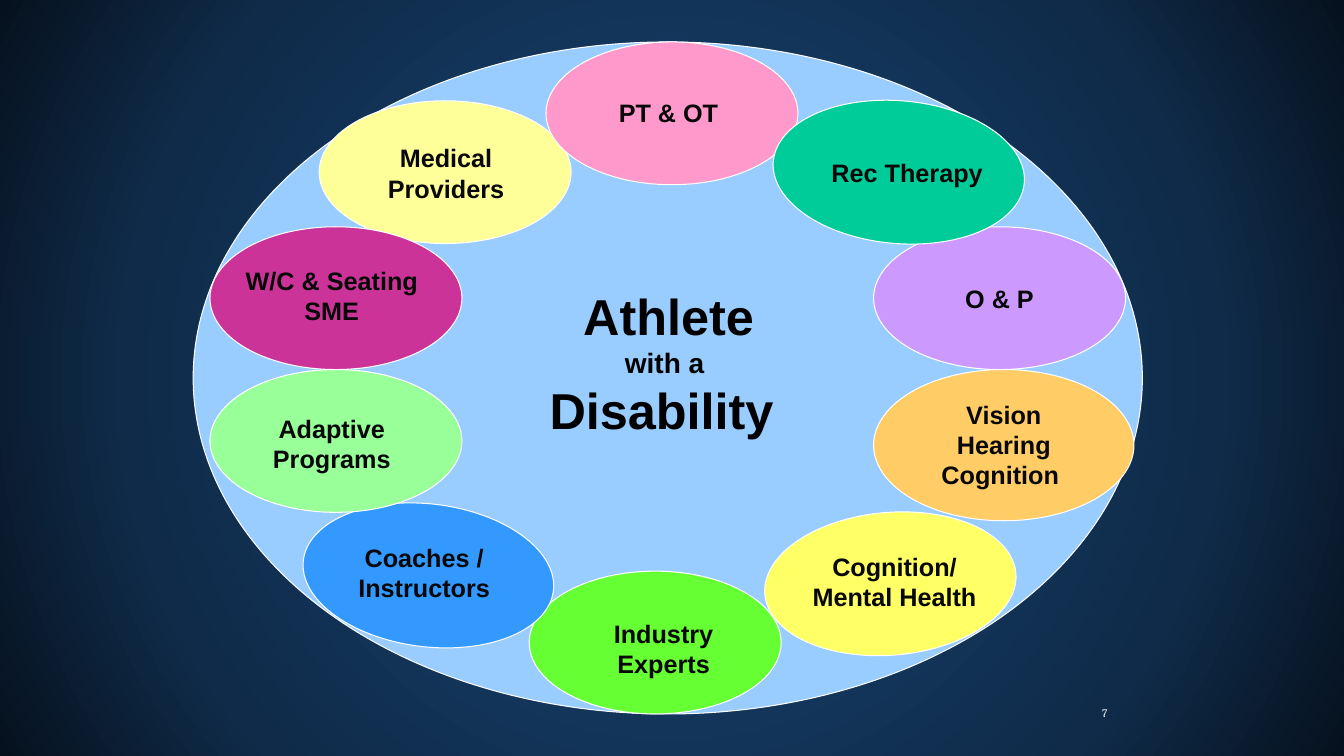
from lxml.etree import SubElement
from pptx import Presentation
from pptx.dml.color import RGBColor
from pptx.enum.shapes import MSO_SHAPE
from pptx.enum.text import MSO_ANCHOR, PP_ALIGN
from pptx.oxml.ns import qn
from pptx.util import Inches, Pt

COLUMNS, ROWS = 160, 90
OVAL_WIDTH, OVAL_HEIGHT = 30, 17
LINE_ROWS, INSET_ROWS = 3.6, 1.2

ROLES = [
    ("Medical\nProviders", "FFFF99", (38, 12), 0, (41.6, 16.4, 23)),
    ("PT & OT ", "FF99CC", (65, 5), 0, (68, 11, 24)),
    ("O & P", "CC99FF", (104, 27), 0, None),
    ("Vision\vHearing\nCognition ", "FFCC66", (104, 44, 31, 18), 0, (108, 46.9, 23)),
    ("Cognition/\nMental Health", "FFFF66", (91, 61), -4.8, (94, 65, 25)),
    ("Industry\nExperts", "66FF33", (63, 68), 0, (66, 73, 26)),
    ("Coaches /\nInstructors", "3399FF", (36, 60), 7, (38, 64, 25)),
    ("Adaptive\vPrograms", "99FF99", (25, 44), 0, (27, 48.6, 25)),
    ("W/C & Seating\nSME", "CC3399", (25, 27), 0, (27, 31, 25)),
    ("Rec Therapy", "00CC99", (92, 12), 4.9, (93, 18.1, 30)),
]


def color(value):
    return RGBColor.from_string(value)


class TeamSlide:
    """Draws ovals and labels on a slide divided into columns and rows."""

    def __init__(self, deck):
        self.deck = deck
        self.slide = deck.slides.add_slide(deck.slide_layouts[6])
        self.ink, self.outline, self.font = "080808", "FFFFFF", "Arial"

    def place(self, column, row, width, height):
        across = self.deck.slide_width / COLUMNS
        down = self.deck.slide_height / ROWS
        return [round(n) for n in (column * across, row * down, width * across, height * down)]

    def backdrop(self, stops):
        self.slide.background.fill.gradient()
        gradient = next(self.slide.element.iter(qn("a:gradFill")))
        for child in list(gradient):
            gradient.remove(child)
        stop_list = SubElement(gradient, qn("a:gsLst"))
        for percent, value in stops:
            stop = SubElement(stop_list, qn("a:gs"), pos=str(percent * 1000))
            SubElement(stop, qn("a:srgbClr"), val=value)
        circle = SubElement(gradient, qn("a:path"), path="circle")
        SubElement(circle, qn("a:fillToRect"), l="50000", t="50000", r="50000", b="50000")

    def oval(self, fill, column, row, width=OVAL_WIDTH, height=OVAL_HEIGHT, turn=0):
        oval = self.slide.shapes.add_shape(MSO_SHAPE.OVAL, *self.place(column, row, width, height))
        oval.shadow.inherit = False
        oval.rotation = turn
        oval.fill.solid()
        oval.fill.fore_color.rgb = color(fill)
        oval.line.color.rgb = color(self.outline)
        oval.line.width = Pt(0.75)
        return oval

    def set_text(self, frame, text, sizes=(18,), ink=None, font=None, bold=True, align=PP_ALIGN.CENTER):
        frame.text = text
        for index, paragraph in enumerate(frame.paragraphs):
            paragraph.alignment = align
            for run in paragraph.runs:
                run.font.size = Pt(sizes[index % len(sizes)])
                run.font.name = font or self.font
                run.font.bold = bold
                run.font.color.rgb = color(ink or self.ink)

    def label(self, text, column, row, width, height=None, **style):
        lines = 1 + text.count("\n") + text.count("\v")
        height = height or lines * LINE_ROWS + INSET_ROWS
        frame = self.slide.shapes.add_textbox(*self.place(column, row, width, height)).text_frame
        frame.word_wrap = True
        self.set_text(frame, text, **style)
        return frame

    def role(self, text, fill, spot, turn, label_spot):
        oval = self.oval(fill, *spot, turn=turn)
        if label_spot:
            self.label(text, *label_spot)
        else:
            oval.text_frame.word_wrap = False
            oval.text_frame.vertical_anchor = MSO_ANCHOR.MIDDLE
            self.set_text(oval.text_frame, text)

    def page_number(self, text):
        frame = self.label(text, 114.7, 83.6, 18.7, 2.5, sizes=(8.2,), ink="FFFFFF",
                           font="Cambria", bold=False, align=PP_ALIGN.RIGHT)
        frame.vertical_anchor = MSO_ANCHOR.MIDDLE
        frame.margin_left = frame.margin_right = Inches(0.13)
        frame.margin_top = frame.margin_bottom = Inches(0.07)


def main():
    deck = Presentation()
    deck.slide_width, deck.slide_height = Inches(13.33), Inches(7.5)
    team = TeamSlide(deck)
    team.backdrop([(17, "17406D"), (71, "0F2B49"), (100, "06111E")])
    team.page_number("7")
    team.oval("99CCFF", 23, 5, 113, 80)
    team.label("Athlete\nwith a \nDisability ", 56.6, 33.3, 46, 20.4, sizes=(36, 20, 36), ink="000000")
    for role in ROLES:
        team.role(*role)
    deck.save("out.pptx")


if __name__ == "__main__":
    main()
